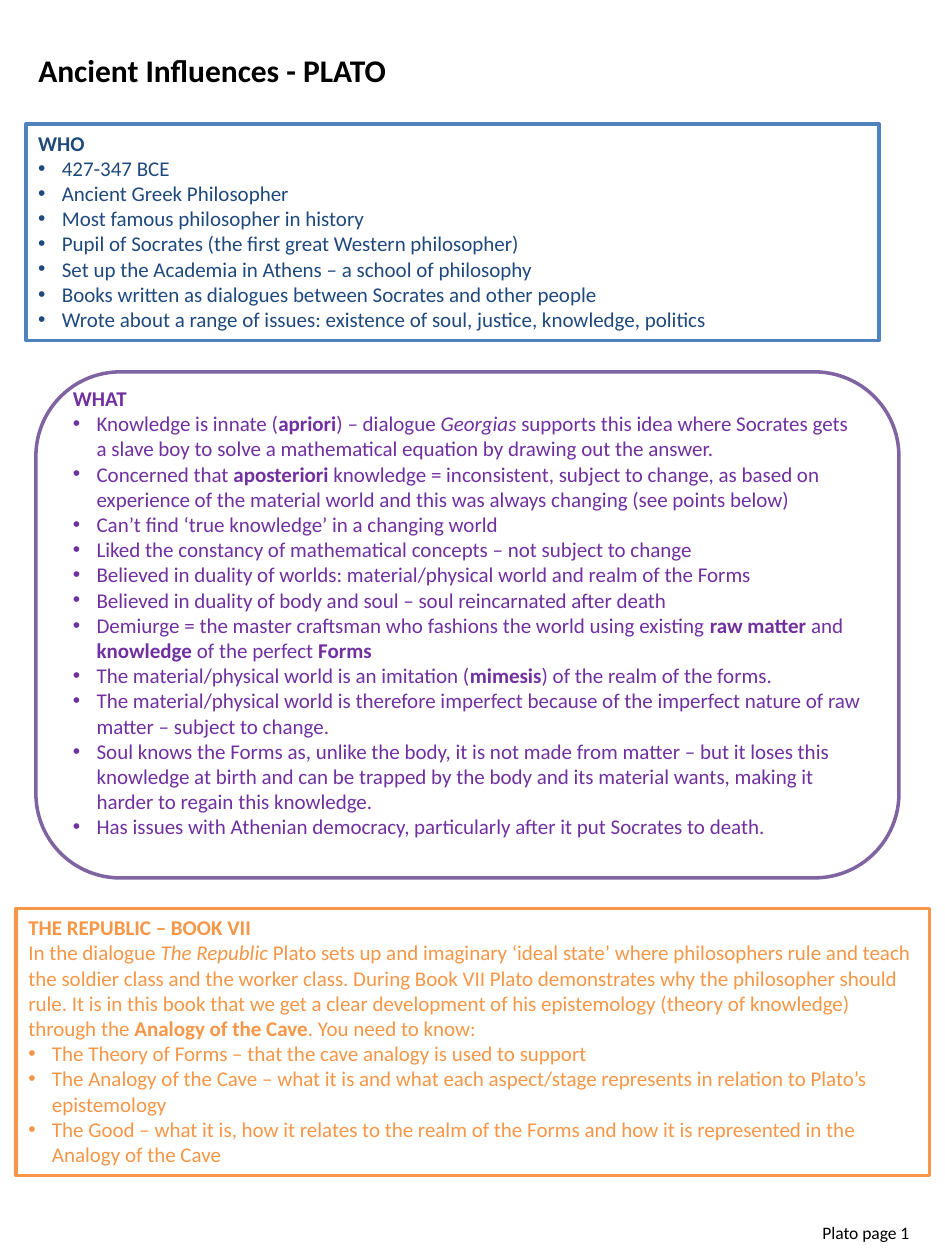
from lxml import etree
from pptx import Presentation
from pptx import util as u
from pptx.dml.color import RGBColor
from pptx.enum import shapes, text
from pptx.oxml.ns import qn

COLORS = {
    "white": "FFFFFF", "black": "000000",
    "who line": "4F81BD", "who text": "1F497D",
    "what line": "8064A2", "what text": "7030A0",
    "republic": "F79646",
}
BULLET = "• "
INDENT = u.Pt(13.5)


def write_text(shape, lines, color, size=12, bold_first=False, wrap=True,
               anchor=text.MSO_ANCHOR.TOP, fit=text.MSO_AUTO_SIZE.SHAPE_TO_FIT_TEXT):
    """Write one paragraph per line; *word* is bold, _word_ is italic, a leading • makes a bullet."""
    frame = shape.text_frame
    frame.word_wrap = wrap
    frame.auto_size = fit
    frame.vertical_anchor = anchor
    for number, line in enumerate(lines):
        paragraph = frame.paragraphs[0] if number == 0 else frame.add_paragraph()
        paragraph.alignment = text.PP_ALIGN.LEFT
        if line.startswith(BULLET):
            line = line[len(BULLET):]
            properties = paragraph._p.get_or_add_pPr()
            properties.set("marL", str(INDENT))
            properties.set("indent", str(-INDENT))
            etree.SubElement(properties, qn("a:buFont"), typeface="Arial")
            etree.SubElement(properties, qn("a:buChar"), char=BULLET.strip())
        for bold_index, bold_part in enumerate(line.split("*")):
            for italic_index, part in enumerate(bold_part.split("_")):
                if not part:
                    continue
                run = paragraph.add_run()
                run.text = part
                run.font.name = "Calibri"
                run.font.size = u.Pt(size)
                run.font.bold = bold_index % 2 == 1 or (bold_first and number == 0)
                run.font.italic = italic_index % 2 == 1
                run.font.color.rgb = RGBColor.from_string(COLORS[color])


presentation = Presentation()
presentation.slide_width = u.Pt(540)
presentation.slide_height = u.Pt(720)
slide = presentation.slides.add_slide(presentation.slide_layouts[6])

who = [
    "WHO",
    "• 427-347 BCE",
    "• Ancient Greek Philosopher",
    "• Most famous philosopher in history",
    "• Pupil of Socrates (the first great Western philosopher)",
    "• Set up the Academia in Athens – a school of philosophy",
    "• Books written as dialogues between Socrates and other people",
    "• Wrote about a range of issues: existence of soul, justice, knowledge, politics",
]
what = [
    "WHAT",
    "• Knowledge is innate (*apriori*) – dialogue _Georgias_ supports this idea where Socrates "
    "gets a slave boy to solve a mathematical equation by drawing out the answer.",
    "• Concerned that *aposteriori* knowledge = inconsistent, subject to change, as based on "
    "experience of the material world and this was always changing (see points below)",
    "• Can’t find ‘true knowledge’ in a changing world",
    "• Liked the constancy of mathematical concepts – not subject to change",
    "• Believed in duality of worlds: material/physical world and realm of the Forms",
    "• Believed in duality of body and soul – soul reincarnated after death",
    "• Demiurge = the master craftsman who fashions the world using existing *raw matter* and "
    "*knowledge *of the perfect *Forms*",
    "• The material/physical world is an imitation (*mimesis*) of the realm of the forms.",
    "• The material/physical world is therefore imperfect because of the imperfect nature of "
    "raw matter – subject to change.",
    "• Soul knows the Forms as, unlike the body, it is not made from matter – but it loses this "
    "knowledge at birth and can be trapped by the body and its material wants, making it harder "
    "to regain this knowledge.",
    "• Has issues with Athenian democracy, particularly after it put Socrates to death.",
]
republic = [
    "THE REPUBLIC – BOOK VII",
    "In the dialogue _The Republic_ Plato sets up and imaginary ‘ideal state’ where philosophers "
    "rule and teach the soldier class and the worker class. During Book VII Plato demonstrates "
    "why the philosopher should rule. It is in this book that we get a clear development of his "
    "epistemology (theory of knowledge) through the *Analogy of the Cave*. You need to know:",
    "• The Theory of Forms – that the cave analogy is used to support",
    "• The Analogy of the Cave – what it is and what each aspect/stage represents in relation to "
    "Plato’s epistemology",
    "• The Good – what it is, how it relates to the realm of the Forms and how it is represented "
    "in the Analogy of the Cave",
]

# Outlined panels: preset, bounds, line colour, text colour, lines
RECTANGLE = shapes.MSO_SHAPE.RECTANGLE
ROUNDED = shapes.MSO_SHAPE.ROUNDED_RECTANGLE
panels = [
    (RECTANGLE, (14.8, 70.75, 487.5, 123.8), "who line", "who text", who),
    (ROUNDED, (20.5, 212.5, 493.2, 289.2), "what line", "what text", what),
    (RECTANGLE, (9.1, 519.2, 522, 152.6), "republic", "republic", republic),
]
for preset, bounds, line_color, text_color, lines in panels:
    panel = slide.shapes.add_shape(preset, *map(u.Pt, bounds))
    panel.shadow.inherit = False
    panel.fill.solid()
    panel.fill.fore_color.rgb = RGBColor.from_string(COLORS["white"])
    panel.line.color.rgb = RGBColor.from_string(COLORS[line_color])
    panel.line.width = u.Pt(2)
    if preset == ROUNDED:
        # The deeper bottom inset lifts the centred text
        panel.text_frame.margin_bottom = u.Pt(18)
        write_text(panel, lines, text_color, bold_first=True,
                   anchor=text.MSO_ANCHOR.MIDDLE, fit=text.MSO_AUTO_SIZE.NONE)
    else:
        write_text(panel, lines, text_color, bold_first=True)

# Title and page label
labels = [
    ((14.8, 25.5, 215, 29), "*Ancient Influences - PLATO*", 18),
    ((462.8, 695, 64.5, 19.4), "Plato page 1", 10),
]
for bounds, line, size in labels:
    label = slide.shapes.add_textbox(*map(u.Pt, bounds))
    write_text(label, [line], "black", size=size, wrap=False)

presentation.save("out.pptx")
